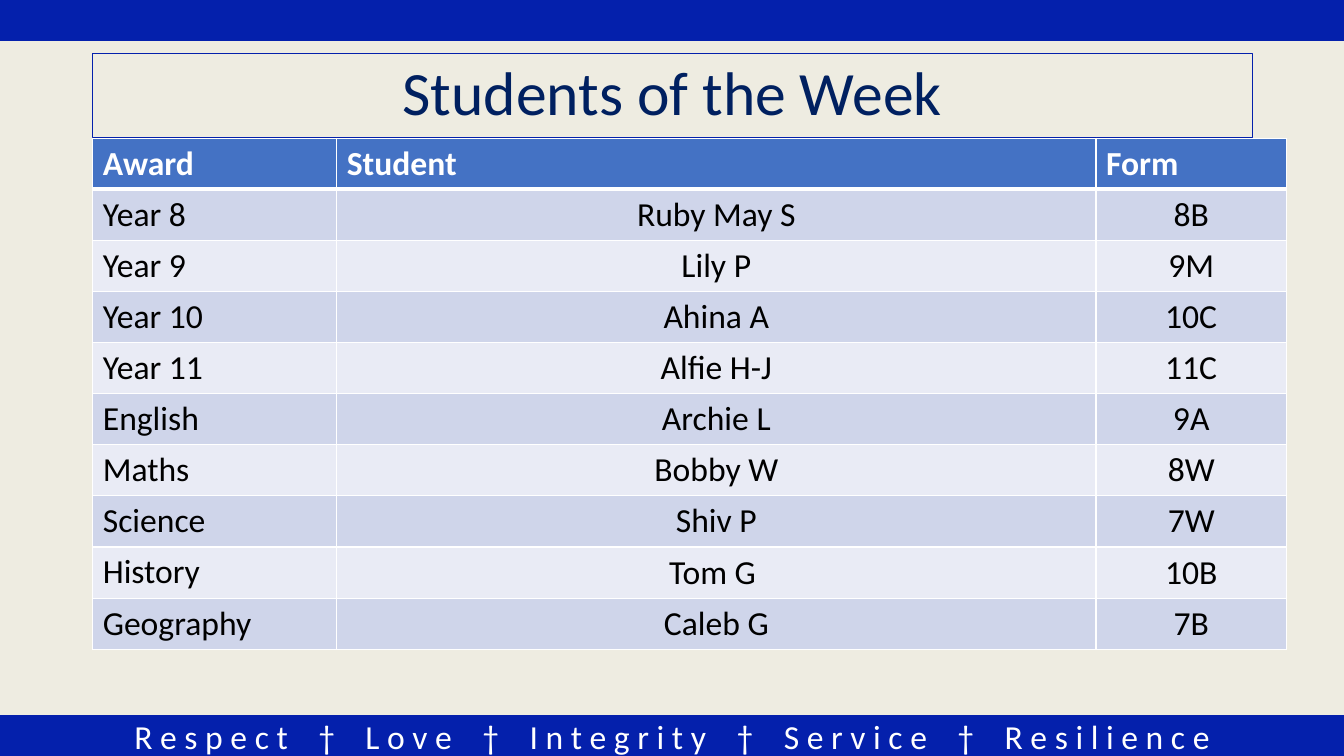
from dataclasses import dataclass

from lxml import etree
from pptx import Presentation
from pptx.dml.color import RGBColor
from pptx.enum.shapes import MSO_SHAPE
from pptx.enum.text import MSO_ANCHOR, MSO_AUTO_SIZE, PP_ALIGN
from pptx.oxml.ns import qn
from pptx.util import Inches, Pt

RECTANGLE = MSO_SHAPE.RECTANGLE
MIDDLE, BOTTOM, TOP = MSO_ANCHOR.MIDDLE, MSO_ANCHOR.BOTTOM, MSO_ANCHOR.TOP
LEFT, CENTER = PP_ALIGN.LEFT, PP_ALIGN.CENTER
NO_AUTOFIT = MSO_AUTO_SIZE.NONE
TITLE_ONLY = 5

SLIDE_WIDTH, SLIDE_HEIGHT, BAR_HEIGHT = 13.33, 7.5, 0.4
VALUES = ["Respect", "Love", "Integrity", "Service", "Resilience"]
COLUMN_WIDTHS = [2.42, 7.53, 1.89]
ROW_HEIGHT = 0.41
AWARDS = [
    ("Award", "Student", "Form"),
    ("Year 8", "Ruby May S", "8B"),
    ("Year 9", "Lily P", "9M"),
    ("Year 10", "Ahina A", "10C"),
    ("Year 11", "Alfie H-J", "11C"),
    ("English", "Archie L", "9A"),
    ("Maths", "Bobby W", "8W"),
    ("Science", "Shiv P", "7W"),
    ("History", "Tom G ", "10B"),
    ("Geography", "Caleb G", "7B"),
]


@dataclass(frozen=True)
class Theme:
    font: str = "Calibri"
    background: str = "EEECE1"
    bar: str = "0420AC"
    title: str = "002060"
    header: str = "4472C4"
    bands: tuple = ("E9EBF5", "CFD5EA")
    light: str = "FFFFFF"
    dark: str = "000000"
    title_size: int = 44
    text_size: int = 24
    motto_gap: float = 16.3
    thin_border: float = 1
    thick_border: float = 3


class SlideBuilder:
    def __init__(self, slide, theme):
        self.slide = slide
        self.theme = theme
        self.paint(slide.background.fill, theme.background)

    def paint(self, fill, color):
        fill.solid()
        fill.fore_color.rgb = RGBColor.from_string(color)

    def outline(self, shape, width):
        self.paint(shape.line.fill, self.theme.bar)
        shape.line.width = Pt(width)

    def run(self, paragraph, text, color, size, bold=False):
        run = paragraph.add_run()
        run.text = text
        run.font.name = self.theme.font
        run.font.size = Pt(size)
        run.font.bold = bold
        run.font.color.rgb = RGBColor.from_string(color)
        return run

    def bar(self, top):
        shape = self.slide.shapes.add_shape(
            RECTANGLE, 0, Inches(top), Inches(SLIDE_WIDTH), Inches(BAR_HEIGHT))
        shape.shadow.inherit = False
        self.paint(shape.fill, self.theme.bar)
        self.outline(shape, 1)
        return shape

    def motto(self, shape, words):
        """Write letter-spaced words with widely spaced daggers between them."""
        theme = self.theme
        shape.text_frame.vertical_anchor = MIDDLE
        paragraph = shape.text_frame.paragraphs[0]
        paragraph.alignment = CENTER
        for index, word in enumerate(words):
            spaced = " ".join(word)
            if index:
                dagger = self.run(paragraph, " †", theme.light, theme.text_size)
                dagger.font._element.set("spc", str(round(theme.motto_gap * 100)))
                spaced = " " + spaced
            self.run(paragraph, spaced, theme.light, theme.text_size)

    def title(self, text, left, top, width, height):
        title = self.slide.shapes.title
        title.left, title.top = Inches(left), Inches(top)
        title.width, title.height = Inches(width), Inches(height)
        self.outline(title, 0.75)
        frame = title.text_frame
        frame.auto_size = NO_AUTOFIT
        frame.vertical_anchor = MIDDLE
        paragraph = frame.paragraphs[0]
        paragraph.alignment = CENTER
        paragraph.line_spacing = 0.9
        self.run(paragraph, text, self.theme.title, self.theme.title_size)

    def borders(self, cell, top, bottom):
        thin = self.theme.thin_border
        properties = cell._tc.get_or_add_tcPr()
        for side, width in zip("LRTB", (thin, thin, top, bottom)):
            line = etree.SubElement(properties, qn(f"a:ln{side}"), w=str(Pt(width)))
            fill = etree.SubElement(line, qn("a:solidFill"))
            etree.SubElement(fill, qn("a:srgbClr"), val=self.theme.light)

    def cell(self, cell, text, row, column):
        theme = self.theme
        is_header = row == 0
        is_centered = not is_header and column > 0
        self.borders(cell,
                     theme.thick_border if row == 1 else theme.thin_border,
                     theme.thick_border if is_header else theme.thin_border)
        self.paint(cell.fill, theme.header if is_header else theme.bands[row % 2])
        cell.vertical_anchor = BOTTOM if is_centered else TOP
        if is_centered:
            cell.margin_left = cell.margin_right = cell.margin_top = Inches(0.01)
        paragraph = cell.text_frame.paragraphs[0]
        paragraph.alignment = CENTER if is_centered else LEFT
        self.run(paragraph, text, theme.light if is_header else theme.dark,
                 theme.text_size, is_header)

    def table(self, rows, left, top, height):
        table = self.slide.shapes.add_table(
            len(rows), len(COLUMN_WIDTHS), Inches(left), Inches(top),
            Inches(sum(COLUMN_WIDTHS)), Inches(height)).table
        for column, width in zip(table.columns, COLUMN_WIDTHS):
            column.width = Inches(width)
        for row_index, texts in enumerate(rows):
            table.rows[row_index].height = Inches(ROW_HEIGHT)
            for column_index, text in enumerate(texts):
                self.cell(table.cell(row_index, column_index), text,
                          row_index, column_index)


def main():
    presentation = Presentation()
    presentation.slide_width = Inches(SLIDE_WIDTH)
    presentation.slide_height = Inches(SLIDE_HEIGHT)
    slide = presentation.slides.add_slide(presentation.slide_layouts[TITLE_ONLY])
    builder = SlideBuilder(slide, Theme())
    builder.motto(builder.bar(SLIDE_HEIGHT - BAR_HEIGHT), VALUES)
    builder.bar(0)
    builder.title("Students of the Week", 0.92, 0.53, 11.5, 0.83)
    builder.table(AWARDS, 0.92, 1.37, 5)
    presentation.save("out.pptx")


if __name__ == "__main__":
    main()
